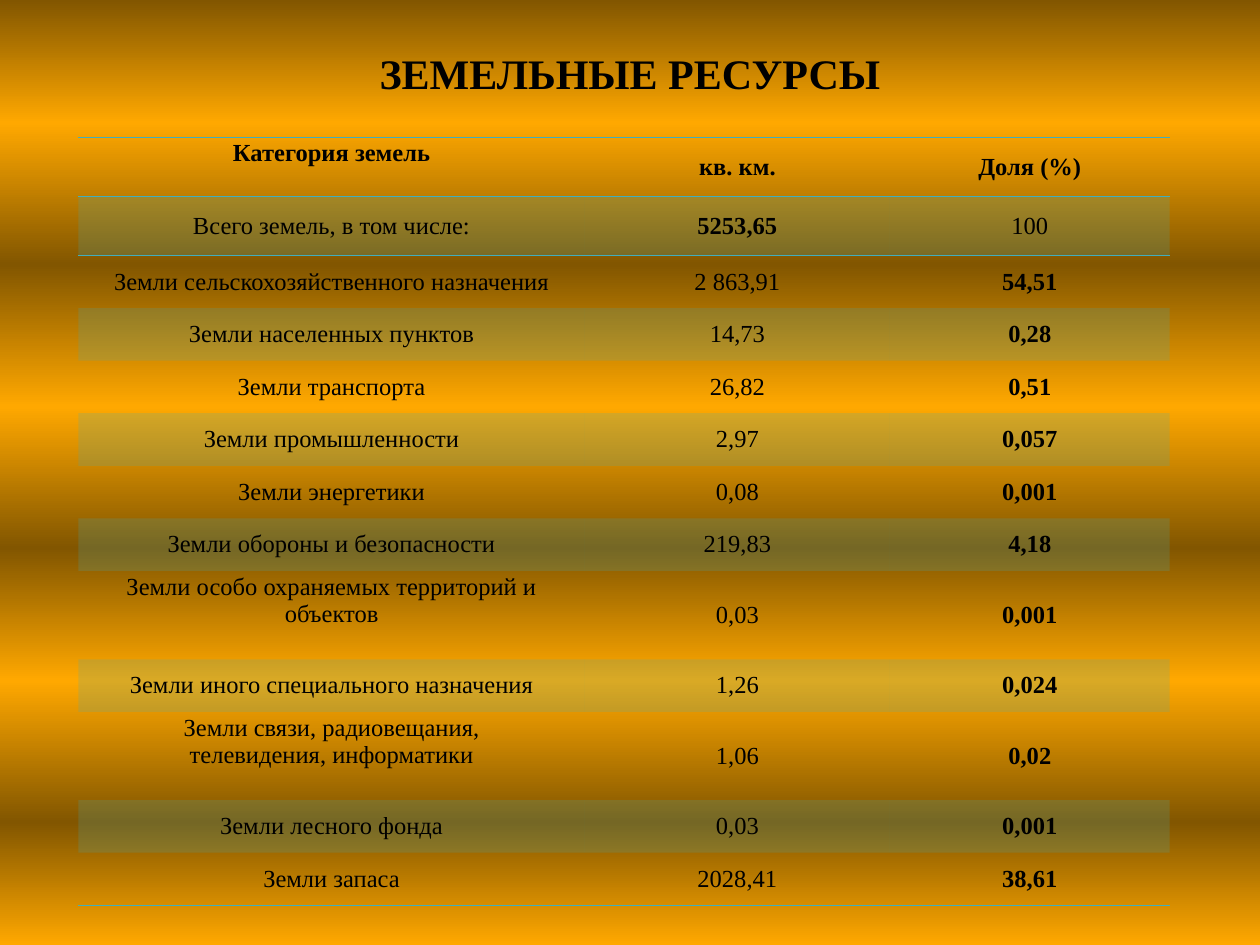
from copy import deepcopy

from lxml.etree import SubElement
from pptx import Presentation
from pptx.dml.color import RGBColor
from pptx.enum.text import MSO_ANCHOR as Anchor, PP_ALIGN as Align
from pptx.oxml.ns import qn
from pptx.util import Cm, Pt

COLORS = {"dark": "825600", "bright": "FFA800", "accent": "41AEBD", "text": "000000"}
FONT = "Times New Roman"
GRADIENT_STOPS = [0, 13, 28, 43, 58, 72, 87, 100]
NO_STYLE = "{2D5ABB26-0587-4C30-8999-92F81FD0307C}"
COLUMN_WIDTHS = [10.21, 6.15, 5.64]
HEADER_HEIGHT, ROW_HEIGHT, TALL_HEIGHT = 1.19, 1.06, 1.78
LINE_HEIGHT = 0.57

ROWS = [
    ("Категория земель", "кв. км.", "Доля (%)"),
    ("Всего земель, в том числе:", "5253,65", "100"),
    ("Земли сельскохозяйственного назначения", "2 863,91", "54,51"),
    ("Земли населенных пунктов", "14,73", "0,28"),
    ("Земли транспорта", "26,82", "0,51"),
    ("Земли промышленности", "2,97", "0,057"),
    ("Земли энергетики", "0,08", "0,001"),
    ("Земли обороны и безопасности", "219,83", "4,18"),
    ("Земли особо охраняемых территорий и объектов", "0,03", "0,001"),
    ("Земли иного специального назначения", "1,26", "0,024"),
    ("Земли связи, радиовещания,\nтелевидения, информатики", "1,06", "0,02"),
    ("Земли лесного фонда", "0,03", "0,001"),
    ("Земли запаса", "2028,41", "38,61"),
]
HEADER, TOTAL, LAST = 0, 1, len(ROWS) - 1
TALL_ROWS = (8, 10)


def set_values(target, values):
    for name, value in values.items():
        setattr(target, name, value)


def write_text(frame, text, size, bold):
    frame.text = text
    for para in frame.paragraphs:
        para.alignment = Align.CENTER
        for span in para.runs:
            set_values(span.font, {"name": FONT, "size": Pt(size), "bold": bold})
            span.font.color.rgb = RGBColor.from_string(COLORS["text"])


def paint_background(page):
    """Fill the page from top to bottom with alternating dark and bright bands."""
    fill = page.background.fill
    fill.gradient()
    fill.gradient_angle = 270
    stops = page.element.find(".//" + qn("a:gsLst"))
    for stop in list(stops):
        stops.remove(stop)
    for index, position in enumerate(GRADIENT_STOPS):
        stop = SubElement(stops, qn("a:gs"), pos=str(position * 1000))
        shade = "bright" if index % 2 else "dark"
        SubElement(stop, qn("a:srgbClr"), val=COLORS[shade])


def add_title(page, text):
    box = page.shapes.add_textbox(Cm(0), Cm(0.79), Cm(25.4), Cm(1.47))
    set_values(box.text_frame, {"word_wrap": True, "vertical_anchor": Anchor.MIDDLE})
    write_text(box.text_frame, text, 24, True)
    box.text_frame.paragraphs[0].line_spacing = 0.9


def add_border(cell, side):
    line = SubElement(cell._tc.get_or_add_tcPr(), qn("a:ln" + side), w=str(Pt(1)))
    SubElement(SubElement(line, qn("a:solidFill")), qn("a:srgbClr"), val=COLORS["accent"])


def fill_cell(cell, banded):
    if not banded:
        cell.fill.background()
        return
    cell.fill.solid()
    cell.fill.fore_color.rgb = RGBColor.from_string(COLORS["accent"])
    color = cell._tc.tcPr.find(qn("a:solidFill")).find(qn("a:srgbClr"))
    SubElement(color, qn("a:alpha"), val="20000")


def is_bold(row, column):
    if row == HEADER:
        return True
    return column == (1 if row == TOTAL else 2)


def format_cell(cell, row, column):
    raised = column == 0 and row in (HEADER, *TALL_ROWS)
    set_values(cell, {
        "vertical_anchor": Anchor.MIDDLE,
        "margin_left": Cm(0.18), "margin_right": Cm(0.18),
        "margin_top": 0, "margin_bottom": Cm(LINE_HEIGHT if raised else 0),
    })
    write_text(cell.text_frame, ROWS[row][column], 14, is_bold(row, column))
    if row in (HEADER, TOTAL):
        add_border(cell, "T")
    if row in (HEADER, LAST):
        add_border(cell, "B")
    fill_cell(cell, row % 2 == 1)


def add_land_table(page):
    heights = [HEADER_HEIGHT if row <= TOTAL else TALL_HEIGHT if row in TALL_ROWS
               else ROW_HEIGHT for row in range(len(ROWS))]
    frame = page.shapes.add_table(len(ROWS), len(COLUMN_WIDTHS), Cm(1.58), Cm(2.77),
                                  Cm(sum(COLUMN_WIDTHS)), Cm(sum(heights)))
    table = frame.table
    set_values(table, {"first_row": False, "horz_banding": False})
    table._tbl.tblPr.find(qn("a:tableStyleId")).text = NO_STYLE
    for column, width in zip(table.columns, COLUMN_WIDTHS):
        column.width = Cm(width)
    for row, height in enumerate(heights):
        table.rows[row].height = Cm(height)
        for column in range(len(COLUMN_WIDTHS)):
            format_cell(table.cell(row, column), row, column)


def main():
    deck = Presentation()
    set_values(deck, {"slide_width": Cm(25.4), "slide_height": Cm(19.05)})
    page = deck.slides.add_slide(deck.slide_layouts[6])
    paint_background(page)
    add_title(page, "ЗЕМЕЛЬНЫЕ РЕСУРСЫ")
    add_land_table(page)
    deck.save("out.pptx")


if __name__ == "__main__":
    main()
